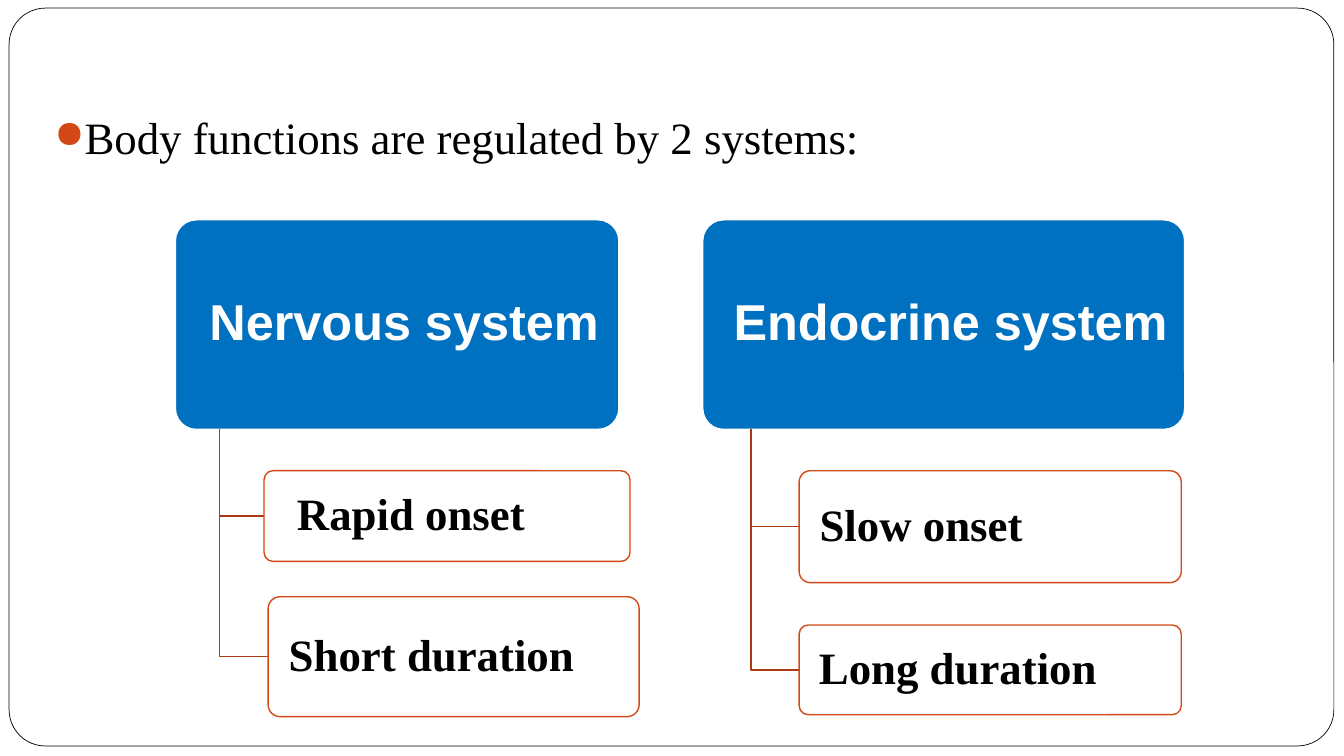
from dataclasses import dataclass

from lxml.etree import SubElement
from pptx import Presentation
from pptx.dml.color import RGBColor
from pptx.enum.shapes import MSO_SHAPE
from pptx.enum.text import MSO_ANCHOR, PP_ALIGN
from pptx.oxml.ns import qn
from pptx.util import Inches, Pt

SLIDE_WIDTH, SLIDE_HEIGHT = Inches(13.33), Inches(7.5)


@dataclass(frozen=True)
class Theme:
    paper: str = "FFFFFF"
    ink: str = "000000"
    system: str = "0070C0"
    accent: str = "D34817"
    branch: str = "A93A12"
    serif: str = "Times New Roman"
    sans: str = "Arial"
    body_size: int = 32
    system_size: int = 36


THEME = Theme()

HEADER_TOP, HEADER_HEIGHT = 29.07, 27.73
STEM_SHARE, TRAIT_SHARE = 0.1, 0.2  # shares of the header's width

# Left and width of each header; traits as (text, shift, top, width, height, inset).
# Positions are percentages of the slide, insets are inches.
SYSTEMS = [
    ("Nervous system", 13.05, 33.0, [
        ("Rapid onset", 0, 62.27, 27.23, 12.0, 0.3),
        ("Short duration", 0.3, 78.93, 27.61, 15.87, 0.17),
    ]),
    ("Endocrine system", 52.29, 35.86, [
        ("Slow onset", 0, 62.27, 28.43, 14.8, 0.17),
        ("Long duration", 0, 82.67, 28.43, 11.87, 0.17),
    ]),
]


def across(percent):
    return round(SLIDE_WIDTH * percent / 100)


def down(percent):
    return round(SLIDE_HEIGHT * percent / 100)


def place(left, top, width, height):
    return across(left), down(top), across(width), down(height)


def style_font(font, face, size, color, bold=False):
    font.name, font.size, font.bold = face, Pt(size), bold
    font.color.rgb = RGBColor.from_string(color)


def style_line(line, color, width):
    line.color.rgb = RGBColor.from_string(color)
    line.width = Pt(width)


def add_rounded(slide, area, fill, outline, width=1, corner=0.1, opacity=100):
    card = slide.shapes.add_shape(MSO_SHAPE.ROUNDED_RECTANGLE, *place(*area))
    card.adjustments[0] = corner
    card.shadow.inherit = False
    card.fill.solid()
    card.fill.fore_color.rgb = RGBColor.from_string(fill)
    if opacity < 100:
        color = card.fill._xPr.find(qn("a:solidFill"))[0]
        SubElement(color, qn("a:alpha")).set("val", str(opacity * 1000))
    style_line(card.line, outline, width)
    return card


def write_label(card, text, face, size, color, align, left_inset):
    frame = card.text_frame
    frame.text = text
    frame.word_wrap = True
    frame.vertical_anchor = MSO_ANCHOR.MIDDLE
    frame.margin_left, frame.margin_right = Inches(left_inset), Inches(0.07)
    frame.margin_top = frame.margin_bottom = Inches(0.04)
    label = frame.paragraphs[0]
    label.alignment = align
    label.line_spacing = 0.9
    style_font(label.runs[0].font, face, size, color, bold=True)


def add_branch(slide, stem, trait_left, middle):
    """Draw an L from the header's bottom edge to the middle of a trait's left side."""
    builder = slide.shapes.build_freeform(
        across(stem), down(HEADER_TOP + HEADER_HEIGHT))
    builder.add_line_segments(
        [(across(stem), down(middle)), (across(trait_left), down(middle))],
        close=False)
    branch = builder.convert_to_shape()
    branch.shadow.inherit = False
    branch.fill.background()
    style_line(branch.line, THEME.branch, 1)


def add_statement(slide, text):
    box = slide.shapes.add_textbox(*place(3.3, 13.87, 96.7, 8))
    frame = box.text_frame
    frame.text = text
    frame.word_wrap = True
    statement = frame.paragraphs[0]
    properties = statement._p.get_or_add_pPr()
    properties.set("marL", str(Inches(0.3)))
    properties.set("indent", str(-Inches(0.3)))
    bullet_color = SubElement(properties, qn("a:buClr"))
    SubElement(bullet_color, qn("a:srgbClr")).set("val", THEME.accent)
    SubElement(properties, qn("a:buSzPct")).set("val", "85000")
    SubElement(properties, qn("a:buChar")).set("char", "●")
    style_font(statement.runs[0].font, THEME.serif, THEME.body_size, THEME.ink)


def add_system(slide, name, left, width, traits):
    header = add_rounded(slide, (left, HEADER_TOP, width, HEADER_HEIGHT),
                         THEME.system, THEME.paper)
    write_label(header, name, THEME.sans, THEME.system_size, THEME.paper,
                PP_ALIGN.CENTER, 0.21)
    for text, shift, top, trait_width, height, inset in traits:
        trait_left = left + width * TRAIT_SHARE + shift
        add_branch(slide, left + width * STEM_SHARE, trait_left, top + height / 2)
        trait = add_rounded(slide, (trait_left, top, trait_width, height),
                            THEME.paper, THEME.accent, opacity=90)
        write_label(trait, text, THEME.serif, THEME.body_size, THEME.ink,
                    PP_ALIGN.LEFT, inset)


def main():
    deck = Presentation()
    deck.slide_width, deck.slide_height = SLIDE_WIDTH, SLIDE_HEIGHT
    slide = deck.slides.add_slide(deck.slide_layouts[6])
    add_rounded(slide, (0.68, 1.07, 98.57, 97.6), THEME.paper, THEME.ink,
                width=0.5, corner=0.049)
    add_statement(slide, "Body functions are regulated by 2 systems:")
    for system in SYSTEMS:
        add_system(slide, *system)
    deck.save("out.pptx")


if __name__ == "__main__":
    main()
